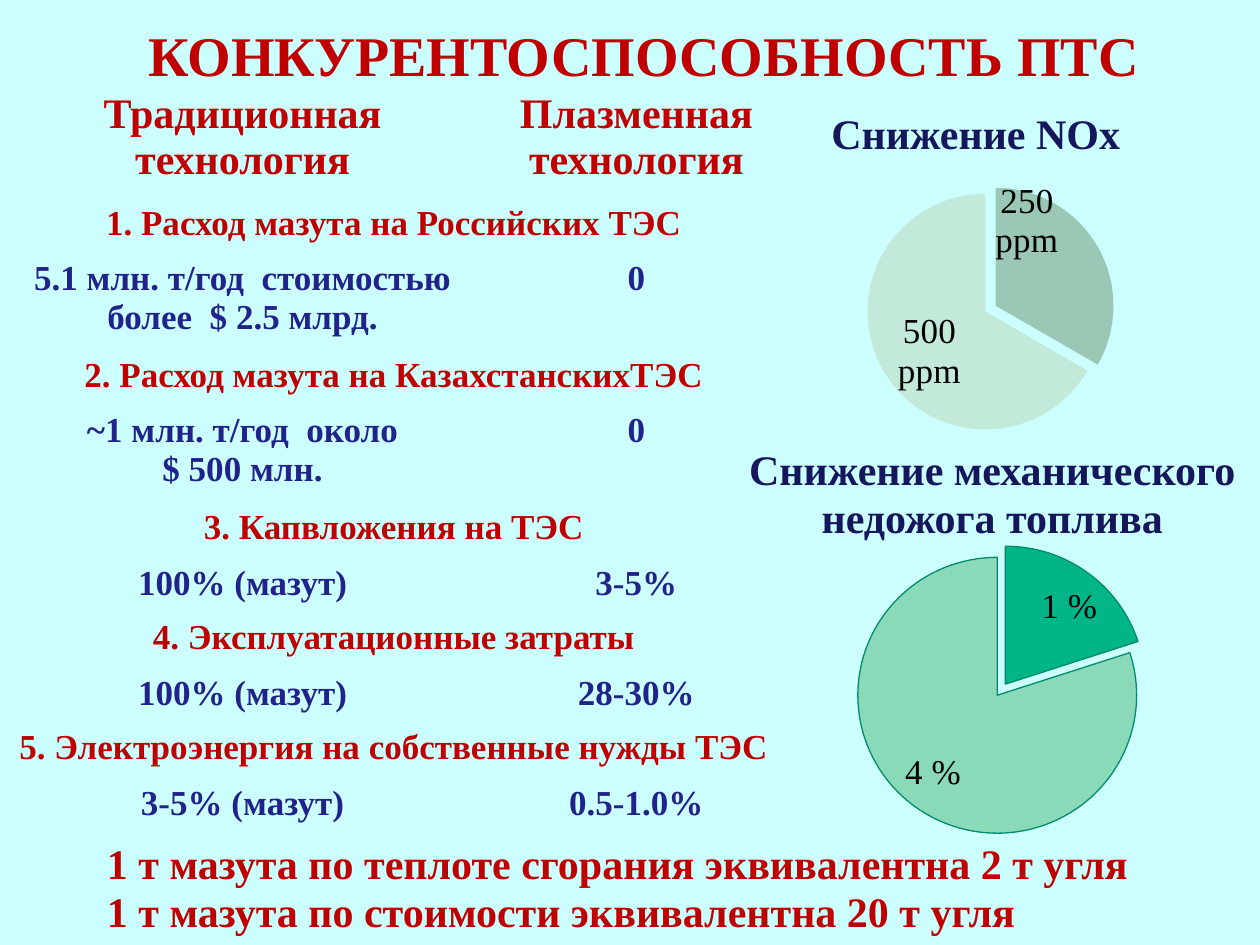
import pptx
import pptx.util
import pptx.chart.data
import pptx.dml.color
import pptx.enum.chart
import pptx.enum.text
from lxml import etree

Inches = pptx.util.Inches
ALIGN = pptx.enum.text.PP_ALIGN
SPOT = pptx.enum.chart.XL_LABEL_POSITION

# Content
TITLE = "КОНКУРЕНТОСПОСОБНОСТЬ ПТС"
HEADS = ("Традиционная технология", "Плазменная технология")
ITEMS = [
    ("1. Расход мазута на Российских ТЭС",
     "5.1 млн. т/год  стоимостью более  $ 2.5 млрд.", "0", 0.76),
    ("2. Расход мазута на КазахстанскихТЭС",
     "~1 млн. т/год  около\n$ 500 млн.", "0", 0.76),
    ("3. Капвложения на ТЭС", "100% (мазут)", "3-5%", 0.43),
    ("4. Эксплуатационные затраты", "100% (мазут)", "28-30%", 0.43),
    ("5. Электроэнергия на собственные нужды ТЭС",
     "3-5% (мазут)", "0.5-1.0%", 0.43),
]
NOTES = ("1 т мазута по теплоте сгорания эквивалентна 2 т угля\n"
         "1 т мазута по стоимости эквивалентна 20 т угля")
# Each text: words, box, wrap, alignment, colour
TEXTS = [
    ("Снижение NOx", (6.5, 0.83, 2.6, 0.51), False, ALIGN.LEFT, "navy"),
    ("Снижение механического недожога топлива",
     (5.75, 3.5, 4.25, 0.91), True, ALIGN.CENTER, "navy"),
    (NOTES, (0.75, 6.63, 8.39, 0.87), False, ALIGN.LEFT, "red"),
]
# Each pie: box, plot area, values, labels, fills, edge, label spot, shifts
PIES = [
    ((5.92, 1.33, 3.92, 2.08), (0, 0.1, 0.97, 0.9), (250, 500),
     ("250 ppm", "500 ppm"), ("sage", "mist"), None,
     SPOT.CENTER, ((-0.04, -0.21), (-0.01, 0.04))),
    ((6, 4.33, 3.83, 2.33), (0, 0.03, 1, 0.95), (1, 4),
     ("1 %", "4 %"), ("green", "mint"), "edge",
     SPOT.INSIDE_END, ((0.03, 0.03), (-0.03, -0.03))),
]
HEX = {"back": "CCFFFF", "red": "C00000", "navy": "16165D", "blue": "22228B",
       "black": "000000", "sage": "9AC8B4", "mist": "C3E9D8",
       "green": "00B588", "mint": "8ADABA", "edge": "008C69"}
FONT = "Times New Roman"


def tint(name):
    return pptx.dml.color.RGBColor.from_string(HEX[name])


def write(frame, text, size=20, color="red", bold=True, align=ALIGN.CENTER,
          space=0.95):
    frame.text = text
    for para in frame.paragraphs:
        para.alignment = align
        para.line_spacing = space
        for run in para.runs:
            font = run.font
            font.name, font.size, font.bold = FONT, pptx.util.Pt(size), bold
            font.color.rgb = tint(color)


def lay(node, index, **parts):
    """Put a manual layout into a chart element."""
    base = "{http://schemas.openxmlformats.org/drawingml/2006/chart}"
    for old in node.findall(base + "layout"):
        node.remove(old)
    frame = etree.Element(base + "layout")
    node.insert(index, frame)
    inner = etree.SubElement(frame, base + "manualLayout")
    for key, val in parts.items():
        etree.SubElement(inner, base + key).set("val", str(val))


def draw_pie(slide, box, plot, vals, names, fills, edge, spot, shifts):
    data = pptx.chart.data.CategoryChartData()
    data.categories = ["1", "2"]
    data.add_series("Series 1", vals)
    chart = slide.shapes.add_chart(
        pptx.enum.chart.XL_CHART_TYPE.PIE, *map(Inches, box), data).chart
    chart.has_legend = chart.has_title = False
    chart.font.name, chart.font.size = FONT, pptx.util.Pt(20)
    chart.font.color.rgb = tint("black")
    left, top, wide, high = plot
    pie = chart.plots[0]
    lay(pie._element.getparent(), 0, layoutTarget="inner",
        xMode="edge", yMode="edge", x=left, y=top, w=wide, h=high)
    pie.vary_by_categories = True
    tags = pie.series[0].data_labels
    tags.show_value = tags.show_category_name = True
    for i, name in enumerate(names):
        point = pie.series[0].points[i]
        point.format.fill.solid()
        point.format.fill.fore_color.rgb = tint(fills[i])
        if edge:
            point.format.line.color.rgb = tint(edge)
            point.format.line.width = pptx.util.Pt(0.75)
        else:
            point.format.line.fill.background()
        label = point.data_label
        write(label.text_frame, name, color="black", bold=False)
        label.position = spot
        node = label.text_frame._txBody.getparent().getparent()
        lay(node, 1, x=shifts[i][0], y=shifts[i][1])
        node.find("{*}showCatName").set("val", "1")
        # Pull the first slice out
        if i == 0:
            dot = point.format._element
            burst = etree.Element(dot.tag.replace("dPt", "explosion"))
            burst.set("val", "10")
            dot.find("{*}spPr").addprevious(burst)


def draw_table(slide):
    rows = [(HEADS, 24, "red", 0.9)]
    for head, old, new, high in ITEMS:
        rows += [((head,), 20, "red", 0.44), ((old, new), 20, "blue", high)]
    table = slide.shapes.add_table(
        len(rows), 2, Inches(0), Inches(0.67), Inches(6.25),
        Inches(5.9)).table
    table.first_row = table.horz_banding = False
    style = table._tbl.tblPr.find("{*}tableStyleId")
    style.text = "{2D5ABB26-0587-4C30-8999-92F81FD0307C}"  # no grid
    table.columns[0].width, table.columns[1].width = Inches(3.85), Inches(2.4)
    for r, (words, size, color, high) in enumerate(rows):
        table.rows[r].height = Inches(high)
        if len(words) == 1:
            table.cell(r, 0).merge(table.cell(r, 1))
        for c, text in enumerate(words):
            cell = table.cell(r, c)
            cell.fill.background()
            write(cell.text_frame, text, size=size, color=color, space=1.0)


def main():
    deck = pptx.Presentation()
    deck.slide_width, deck.slide_height = Inches(10), Inches(7.5)
    slide = deck.slides.add_slide(deck.slide_layouts[5])
    slide.background.fill.solid()
    slide.background.fill.fore_color.rgb = tint("back")

    # Title
    title = slide.shapes.title
    title.left, title.top, title.width, title.height = map(
        Inches, (0.86, 0.2, 8.5, 0.92))
    frame = title.text_frame
    frame.vertical_anchor = pptx.enum.text.MSO_ANCHOR.TOP
    frame.margin_top = 0
    write(frame, TITLE, size=32)

    # Captions and closing lines
    for text, box, wrap, align, color in TEXTS:
        frame = slide.shapes.add_textbox(*map(Inches, box)).text_frame
        frame.word_wrap = wrap
        write(frame, text, size=24, color=color, align=align)

    # Charts and comparison
    for pie in PIES:
        draw_pie(slide, *pie)
    draw_table(slide)
    deck.save("out.pptx")


if __name__ == "__main__":
    main()
